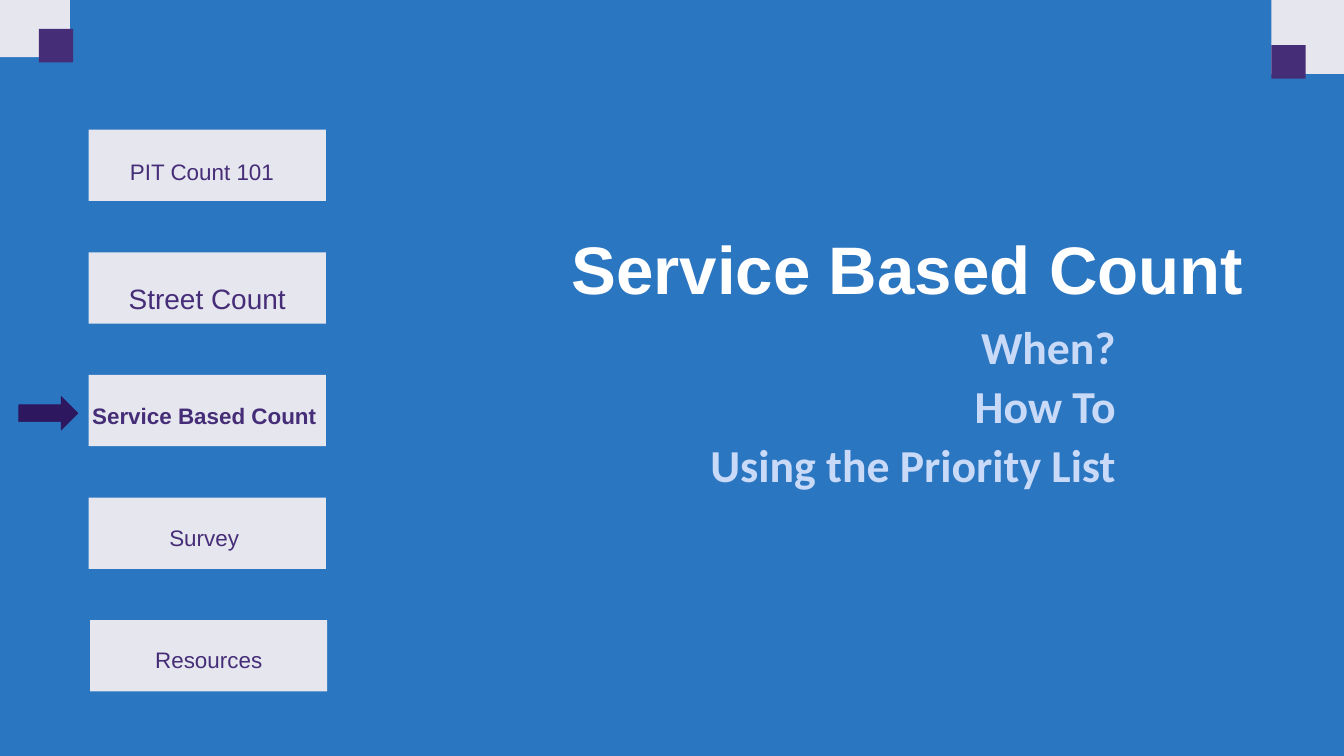
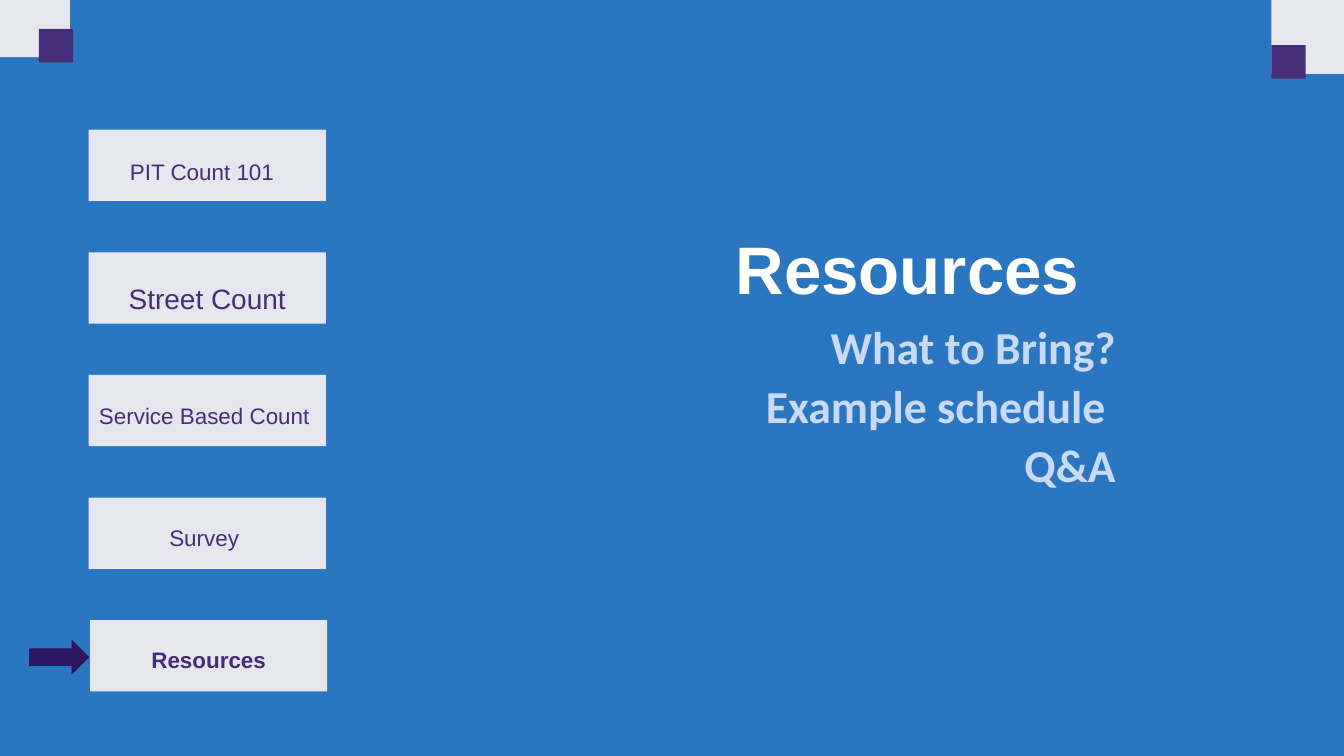
from dataclasses import dataclass

from pptx import Presentation
from pptx.dml.color import RGBColor
from pptx.enum import shapes, text
from pptx.slide import Slide
from pptx.util import Inches, Pt

BLUE = RGBColor(0x2B, 0x76, 0xC0)
PALE = RGBColor(0xE5, 0xE6, 0xEE)
PURPLE = RGBColor(0x46, 0x2D, 0x78)
DARK_PURPLE = RGBColor(0x2D, 0x17, 0x5F)
WHITE = RGBColor(0xFF, 0xFF, 0xFF)
LIGHT_BLUE = RGBColor(0xC9, 0xDA, 0xF8)

TAB_WIDTH, TAB_HEIGHT = 3.53, 1.06
FIRST_TAB_TOP, LAST_TAB_TOP = 1.93, 9.23
FIRST_LABEL_TOP, LAST_LABEL_TOP = 2.27, 9.53


@dataclass(frozen=True)
class Area:
    """A rectangle on the slide, in inches."""
    left: float
    top: float
    width: float
    height: float

    def lengths(self) -> list[int]:
        return [Inches(n) for n in (self.left, self.top, self.width, self.height)]


@dataclass(frozen=True)
class TextStyle:
    font: str
    size: int
    color: RGBColor
    bold: bool
    align: text.PP_ALIGN
    line_spacing: float
    space_before: int = 0
    inset_x: float = 0
    inset_y: float = 0


@dataclass(frozen=True)
class Tab:
    label: str
    left: float = 1.32
    label_left: float = 1.32
    size: int = 24


@dataclass(frozen=True)
class Section:
    title: str
    topics: tuple[str, ...]
    current_tab: int
    arrow_left: float


TITLE_STYLE = TextStyle("Arial", 72, WHITE, True, text.PP_ALIGN.CENTER, 1.2)
TOPIC_STYLE = TextStyle("Calibri", 49, LIGHT_BLUE, True, text.PP_ALIGN.RIGHT,
                        0.9, 10, 0.1, 0.05)

CORNERS = (
    (Area(-0.09, -0.25, 1.13, 1.1), PALE),
    (Area(0.58, 0.43, 0.51, 0.5), PURPLE),
    (Area(18.92, 0, 1.13, 1.1), PALE),
    (Area(18.92, 0.67, 0.51, 0.5), PURPLE),
)

TABS = (
    Tab("PIT Count 101", label_left=1.24),
    Tab("Street Count", size=30),
    Tab("Service Based Count "),
    Tab("Survey "),
    Tab("Resources", left=1.34, label_left=1.34),
)

SECTIONS = (
    Section("Service Based Count",
            ("When?", "How To", "Using the Priority List"), 2, 0.28),
    Section("Resources",
            ("What to Bring?", "Example schedule ", "Q&A"), 4, 0.44),
)


def spread(first: float, last: float, index: int) -> float:
    """Position of a tab's part when all tabs are evenly spaced."""
    return first + (last - first) * index / (len(TABS) - 1)


def add_block(slide: Slide, area: Area, color: RGBColor,
              kind: shapes.MSO_SHAPE = shapes.MSO_SHAPE.RECTANGLE):
    block = slide.shapes.add_shape(kind, *area.lengths())
    block.shadow.inherit = False
    block.fill.solid()
    block.fill.fore_color.rgb = color
    block.line.fill.background()
    return block


def add_text(slide: Slide, area: Area, lines: tuple[str, ...], style: TextStyle) -> None:
    frame = slide.shapes.add_textbox(*area.lengths()).text_frame
    frame.word_wrap = True
    frame.margin_left = frame.margin_right = Inches(style.inset_x)
    frame.margin_top = frame.margin_bottom = Inches(style.inset_y)
    frame.text = "\n".join(lines)
    for para in frame.paragraphs:
        para.alignment = style.align
        para.line_spacing = style.line_spacing
        para.space_before = Pt(style.space_before)
        para.font.name = style.font
        para.font.size = Pt(style.size)
        para.font.bold = style.bold
        para.font.color.rgb = style.color


def add_tabs(slide: Slide, current_tab: int) -> None:
    for index, tab in enumerate(TABS):
        top = spread(FIRST_TAB_TOP, LAST_TAB_TOP, index)
        label_top = spread(FIRST_LABEL_TOP, LAST_LABEL_TOP, index)
        style = TextStyle("Arial", tab.size, PURPLE, index == current_tab,
                          text.PP_ALIGN.CENTER, 1.2)
        add_block(slide, Area(tab.left, top, TAB_WIDTH, TAB_HEIGHT), PALE)
        add_text(slide, Area(tab.label_left, label_top, TAB_WIDTH, tab.size / 60),
                 (tab.label,), style)


def add_arrow(slide: Slide, section: Section) -> None:
    top = spread(FIRST_LABEL_TOP, LAST_LABEL_TOP, section.current_tab)
    arrow = add_block(slide, Area(section.arrow_left, top, 0.88, 0.5), DARK_PURPLE,
                      shapes.MSO_SHAPE.RIGHT_ARROW)
    arrow.line.color.rgb = DARK_PURPLE
    arrow.line.width = Pt(0.75)


def add_section(deck: Presentation, section: Section) -> None:
    slide = deck.slides.add_slide(deck.slide_layouts[6])
    slide.background.fill.solid()
    slide.background.fill.fore_color.rgb = BLUE
    for area, color in CORNERS:
        add_block(slide, area, color)
    add_tabs(slide, section.current_tab)
    add_text(slide, Area(7.51, 3.14, 11.99, 1.21), (section.title,), TITLE_STYLE)
    add_text(slide, Area(9.92, 4.79, 6.78, 4.97), section.topics, TOPIC_STYLE)
    add_arrow(slide, section)


def main() -> None:
    deck = Presentation()
    deck.slide_width, deck.slide_height = Inches(20), Inches(11.25)
    for section in SECTIONS:
        add_section(deck, section)
    deck.save("out.pptx")


if __name__ == "__main__":
    main()
